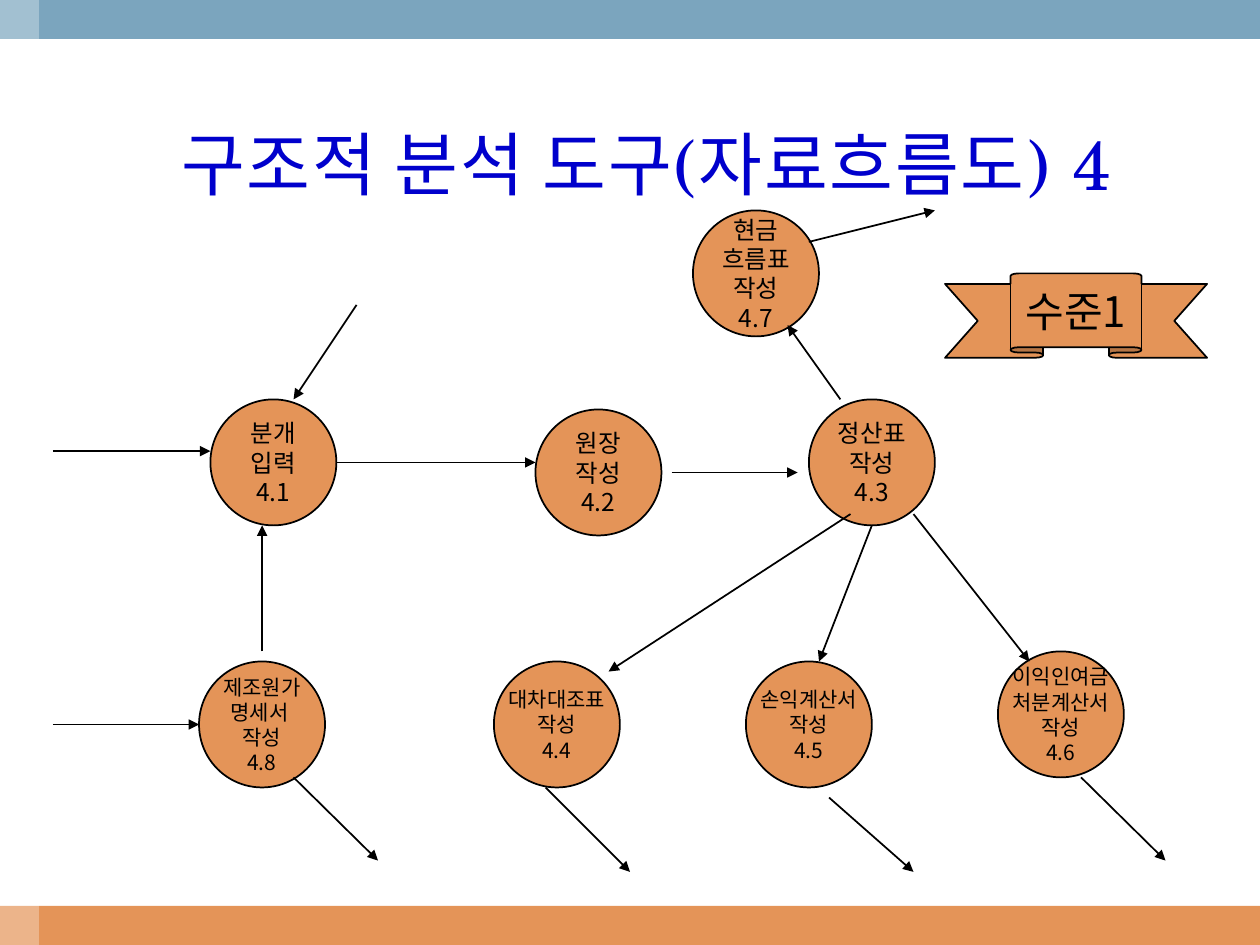
from dataclasses import dataclass

from lxml.etree import SubElement
from pptx import Presentation
from pptx.dml.color import RGBColor
from pptx.enum.shapes import MSO_CONNECTOR, MSO_SHAPE
from pptx.enum.text import MSO_ANCHOR, PP_ALIGN
from pptx.oxml.ns import qn
from pptx.util import Inches, Pt


@dataclass(frozen=True)
class Theme:
    orange: RGBColor = RGBColor(0xE4, 0x94, 0x58)
    blue: RGBColor = RGBColor(0x7B, 0xA5, 0xBE)
    white: RGBColor = RGBColor(0xFF, 0xFF, 0xFF)
    black: RGBColor = RGBColor(0, 0, 0)
    title_color: RGBColor = RGBColor(0, 0, 0xCC)
    title_font: str = "TeX Gyre Schola"
    korean_font: str = "Noto Sans CJK KR"
    title_size: float = 39.6
    ribbon_size: float = 24
    large_size: float = 14
    small_size: float = 12
    line_ratio: float = 1.2
    line_width: float = 1


THEME = Theme()
WIDTH, HEIGHT, BAND = 10, 7.5, 0.31
DIAMETER = 1

PROCESSES = [
    (1.67, 3.17, THEME.large_size, ["분개", "입력", "4.1"]),
    (5.5, 1.67, THEME.large_size, ["현금", "흐름표", "작성", "4.7"]),
    (6.42, 3.17, THEME.large_size, ["정산표", "작성", "4.3"]),
    (4.25, 3.25, THEME.large_size, ["원장", "작성", "4.2"]),
    (1.58, 5.25, THEME.small_size, ["제조원가", "명세서 ", "작성", "4.8"]),
    (3.92, 5.25, THEME.small_size, ["대차대조표", "작성", "4.4"]),
    (5.92, 5.25, THEME.small_size, ["손익계산서", "작성", "4.5"]),
    (7.92, 5.17, THEME.small_size, ["이익인여금", "처분계산서", "작성", "4.6"]),
]

FLOWS = [
    (0.42, 3.58, 1.67, 3.58),
    (2.67, 3.67, 4.25, 3.67),
    (5.33, 3.75, 6.33, 3.75),
    (2.83, 2.42, 2.33, 3.17),
    (2.08, 5.17, 2.08, 4.17),
    (0.42, 5.75, 1.58, 5.75),
    (2.33, 6.17, 3, 6.83),
    (8.58, 6.17, 9.25, 6.83),
    (4.33, 6.25, 5, 6.92),
    (6.58, 6.33, 7.25, 6.92),
    (6.67, 3.17, 6.25, 2.58),
    (6.42, 1.92, 7.42, 1.67),
    (6.75, 4.08, 4.83, 5.33),
    (6.92, 4.17, 6.5, 5.25),
    (7.25, 4.08, 8.17, 5.25),
]


def apply_format(target, values):
    for name, value in values.items():
        setattr(target, name, value)


def write_lines(shape, lines, size, color, font, wrap, spacing=None):
    frame = shape.text_frame
    apply_format(frame, {"word_wrap": wrap, "vertical_anchor": MSO_ANCHOR.MIDDLE})
    for index, line in enumerate(lines):
        para = frame.add_paragraph() if index else frame.paragraphs[0]
        apply_format(para, {"alignment": PP_ALIGN.CENTER, "line_spacing": spacing})
        span = para.add_run()
        span.text = line
        apply_format(span.font, {"size": Pt(size), "name": font})
        span.font.color.rgb = color
    for properties in shape.element.iter(qn("a:rPr")):
        SubElement(properties, qn("a:ea")).set("typeface", THEME.korean_font)


def add_filled(page, kind, box, color, outlined=True):
    shape = page.shapes.add_shape(kind, *map(Inches, box))
    shape.shadow.inherit = False
    shape.fill.solid()
    shape.fill.fore_color.rgb = color
    if outlined:
        shape.line.color.rgb = THEME.black
        shape.line.width = Pt(THEME.line_width)
    else:
        shape.line.fill.background()
    return shape


def add_bands(page, box):
    left, top, width, height = box
    bands = [
        ((left, top + height - BAND, width, BAND), THEME.orange),
        ((left, top, width, BAND), THEME.blue),
        ((left, top, BAND, height), THEME.white),
    ]
    for place, color in bands:
        strip = add_filled(page, MSO_SHAPE.RECTANGLE, place, color, outlined=False)
    tint = next(strip.element.spPr.iter(qn("a:srgbClr")))
    SubElement(tint, qn("a:alpha")).set("val", "30000")


def add_title(page, box):
    title = page.shapes.title
    apply_format(title, dict(zip(("left", "top", "width", "height"), map(Inches, box))))
    write_lines(title, ["구조적 분석 도구(자료흐름도) 4 "], THEME.title_size,
                THEME.title_color, THEME.title_font, True)
    for properties in title.element.iter(qn("a:rPr")):
        properties.set("spc", "100")


def add_level_ribbon(page, box):
    ribbon = add_filled(page, MSO_SHAPE.UP_RIBBON, box, THEME.orange)
    ribbon.adjustments[0] = 0.125
    ribbon.adjustments[1] = 0.5
    write_lines(ribbon, ["수준1"], THEME.ribbon_size, THEME.black,
                THEME.korean_font, False)


def add_process(page, box, size, lines):
    circle = add_filled(page, MSO_SHAPE.OVAL, box, THEME.orange)
    write_lines(circle, lines, size, THEME.black, THEME.korean_font, False,
                Pt(size * THEME.line_ratio))


def add_flow(page, ends):
    arrow = page.shapes.add_connector(MSO_CONNECTOR.STRAIGHT, *map(Inches, ends))
    arrow.line.color.rgb = THEME.black
    arrow.line.width = Pt(THEME.line_width)
    properties = arrow.element.spPr
    SubElement(properties.get_or_add_ln(), qn("a:tailEnd")).set("type", "triangle")
    SubElement(properties, qn("a:effectLst"))


def add_diagram(page, box):
    left, top = box[:2]
    for x, y, size, lines in PROCESSES:
        add_process(page, (left + x, top + y, DIAMETER, DIAMETER), size, lines)
    for x1, y1, x2, y2 in FLOWS:
        add_flow(page, (left + x1, top + y1, left + x2, top + y2))


def main():
    deck = Presentation()
    apply_format(deck, {"slide_width": Inches(WIDTH), "slide_height": Inches(HEIGHT)})
    page = deck.slides.add_slide(deck.slide_layouts[5])
    whole = (0, 0, WIDTH, HEIGHT)
    add_bands(page, whole)
    add_title(page, (0.75, 0.67, 8.92, 1.25))
    add_level_ribbon(page, (7.5, 2.17, 2.08, 0.67))
    add_diagram(page, whole)
    deck.save("out.pptx")


if __name__ == "__main__":
    main()
